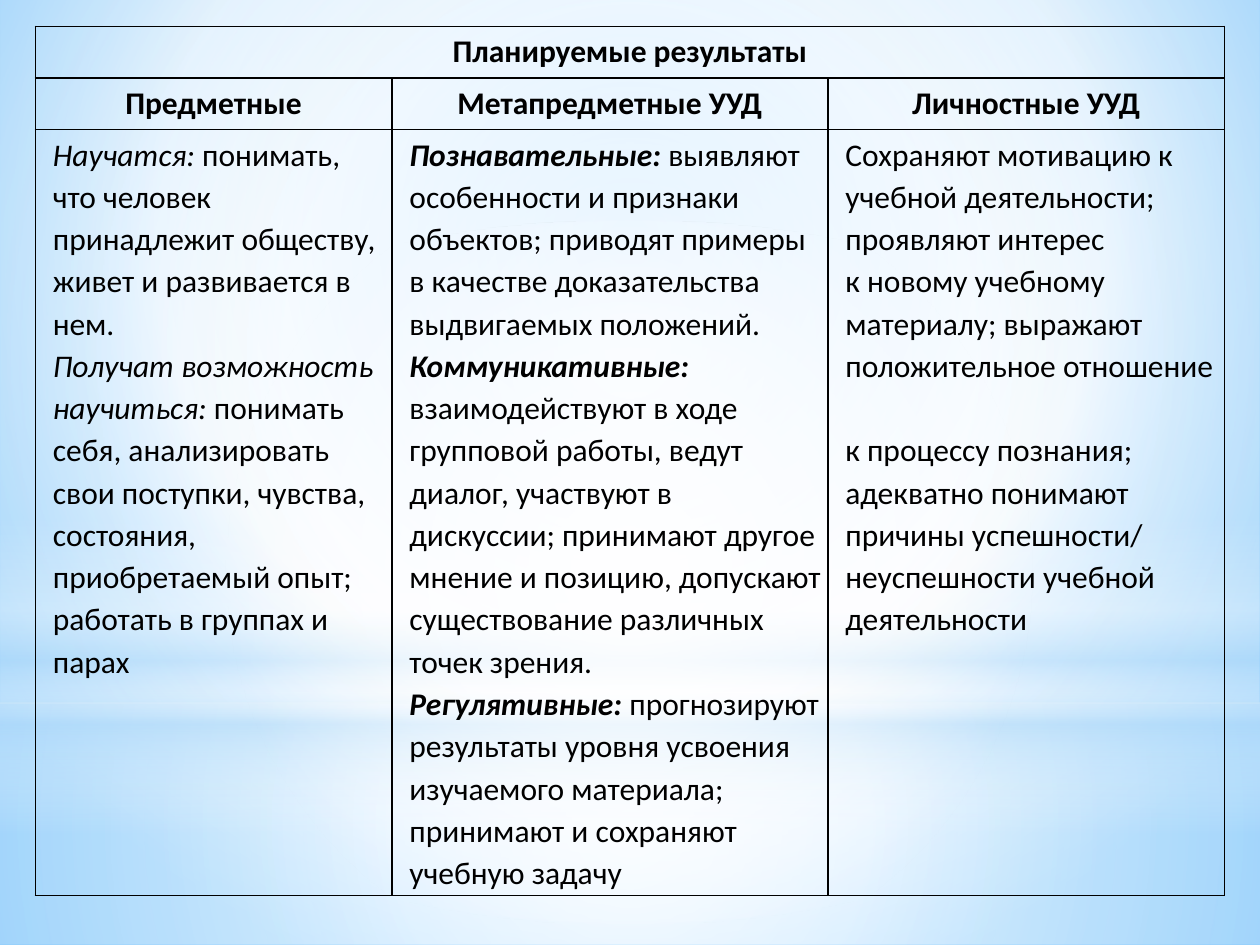
import pptx
import pptx.util
import pptx.dml.color
import pptx.enum.shapes
import pptx.enum.text
import pptx.oxml
import pptx.oxml.ns

Inch, Pt = pptx.util.Inches, pptx.util.Pt
Kind = pptx.enum.shapes.MSO_SHAPE
Align = pptx.enum.text.PP_ALIGN
qn = pptx.oxml.ns.qn
NS = pptx.oxml.ns.nsdecls("a")

# Content: a run is (text, style), style made of b and i
TITLE = "Планируемые результаты"
HEADS = ["Предметные", "Метапредметные УУД", "Личностные УУД"]
BODY = [
    [
        [("Научатся:", "i"),
         (" понимать, что человек принадлежит обществу, живет и развивается в нем.", "")],
        [("Получат возможность научиться:", "i"),
         (" понимать себя, анализировать свои поступки, чувства, состояния, "
          "приобретаемый опыт; работать в группах и парах", "")],
    ],
    [
        [("Познавательные: ", "bi"),
         ("выявляют особенности и признаки объектов; приводят примеры в качестве "
          "доказательства выдвигаемых положений.", "")],
        [("Коммуникативные: ", "bi"),
         ("взаимодействуют в ходе групповой работы, ведут диалог, участвуют в дискуссии; "
          "принимают другое мнение и позицию, допускают существование различных "
          "точек зрения.", "")],
        [("Регулятивные: ", "bi"),
         ("прогнозируют результаты уровня усвоения изучаемого материала; "
          "принимают и сохраняют учебную задачу", "")],
    ],
    [
        [("Сохраняют мотивацию к учебной деятельности; проявляют интерес \n"
          "к новому учебному материалу; выражают положительное отношение \n"
          "к процессу познания; адекватно понимают причины успешности/", "")],
        [("неуспешности учебной деятельности", "")],
    ],
]

# Look: gradient stops are (place, colour, opacity) in percent
COL = {"ink": "000000", "white": "FFFFFF", "pale": "B4DCFA",
       "sky": "9ED5FF", "blue": "5BB9FF"}
FONT, SIZE = "Calibri", 18
WIDE, HIGH = 10, 7.5
MID = (50, 50, 50, 50)
BACK = [(0, "sky", 100), (60, "white", 100), (100, "blue", 100)]
# Kind, top, height, stops, centre (None means top to bottom)
BANDS = [
    (Kind.RECTANGLE, 5.58, 1.92,
     [(0, "white", 91), (37, "white", 76), (100, "pale", 79)], MID),
    (Kind.RECTANGLE, 0, 5.58,
     [(0, "white", 89), (48, "white", 62), (100, "pale", 79)], MID),
    (Kind.RECTANGLE, 4.12, 2.5,
     [(0, "white", 0), (29, "white", 30), (45, "pale", 40),
      (55, "white", 26), (65, "pale", 60), (100, "white", 0)], None),
    (Kind.OVAL, 1.75, 5.58, [(0, "white", 100), (56, "white", 0)], MID),
]
LEFT, TOP = 0.28, 0.21
COLS, ROWS = [2.83, 3.46, 3.15], [0.41, 0.41, 5.96]


def shade(fill, node, stops, focus):
    """Swap a solid fill inside node for a gradient."""
    fill.solid()
    marks = "".join(
        f'<a:gs pos="{at * 1000}"><a:srgbClr val="{COL[tone]}">'
        f'<a:alpha val="{show * 1000}"/></a:srgbClr></a:gs>'
        for at, tone, show in stops)
    if focus:
        sides = " ".join(f'{s}="{v * 1000}"' for s, v in zip("ltrb", focus))
        way = f'<a:path path="circle"><a:fillToRect {sides}/></a:path>'
    else:
        way = '<a:lin ang="5400000" scaled="0"/>'
    old = next(node.iter(qn("a:solidFill")))
    old.getparent().replace(old, pptx.oxml.parse_xml(
        f'<a:gradFill {NS} rotWithShape="1"><a:gsLst>{marks}</a:gsLst>{way}</a:gradFill>'))


def write(cell, paras, head=False):
    """Fill one cell with text, run by run."""
    cell.margin_left = cell.margin_right = Inch(0.04)
    cell.margin_top = cell.margin_bottom = Inch(0.02)
    for n, runs in enumerate(paras):
        frame = cell.text_frame
        para = frame.add_paragraph() if n else frame.paragraphs[0]
        para.line_spacing = 1.1
        para.alignment = Align.CENTER if head else Align.LEFT
        if not head:
            para._p.get_or_add_pPr().set("marL", str(Inch(0.1)))
        for text, style in runs:
            for k, line in enumerate(text.split("\n")):
                if k:
                    para.add_line_break()
                run = para.add_run()
                run.text = line
                font = run.font
                font.name, font.size = FONT, Pt(SIZE)
                font.bold, font.italic = "b" in style, "i" in style
                font.color.rgb = pptx.dml.color.RGBColor.from_string(COL["ink"])


def frame_cell(cell):
    """Draw the four borders and leave the cell clear."""
    props = cell._tc.get_or_add_tcPr()
    for side in "LRTB":
        props.append(pptx.oxml.parse_xml(
            f'<a:ln{side} {NS} w="{Pt(1)}"><a:solidFill><a:srgbClr val="{COL["ink"]}"/>'
            f'</a:solidFill></a:ln{side}>'))
    cell.fill.background()


deck = pptx.Presentation()
deck.slide_width, deck.slide_height = Inch(WIDE), Inch(HIGH)
slide = deck.slides.add_slide(deck.slide_layouts[6])

# Backdrop
shade(slide.background.fill, slide._element, BACK, (20, 10, 20, 60))
for kind, top, high, stops, focus in BANDS:
    band = slide.shapes.add_shape(kind, 0, Inch(top), Inch(WIDE), Inch(high))
    band.shadow.inherit = False
    band.line.fill.background()
    shade(band.fill, band._element.spPr, stops, focus)

# Table
grid = slide.shapes.add_table(
    len(ROWS), len(COLS), Inch(LEFT), Inch(TOP), Inch(sum(COLS)), Inch(sum(ROWS))).table
grid.first_row = grid.horz_banding = False
for col, wide in zip(grid.columns, COLS):
    col.width = Inch(wide)
for row, high in zip(grid.rows, ROWS):
    row.height = Inch(high)
for cell in grid.iter_cells():
    frame_cell(cell)
grid.cell(0, 0).merge(grid.cell(0, len(COLS) - 1))
write(grid.cell(0, 0), [[(TITLE, "b")]], head=True)
for c, (name, paras) in enumerate(zip(HEADS, BODY)):
    write(grid.cell(1, c), [[(name, "b")]], head=True)
    write(grid.cell(2, c), paras)

deck.save("out.pptx")
